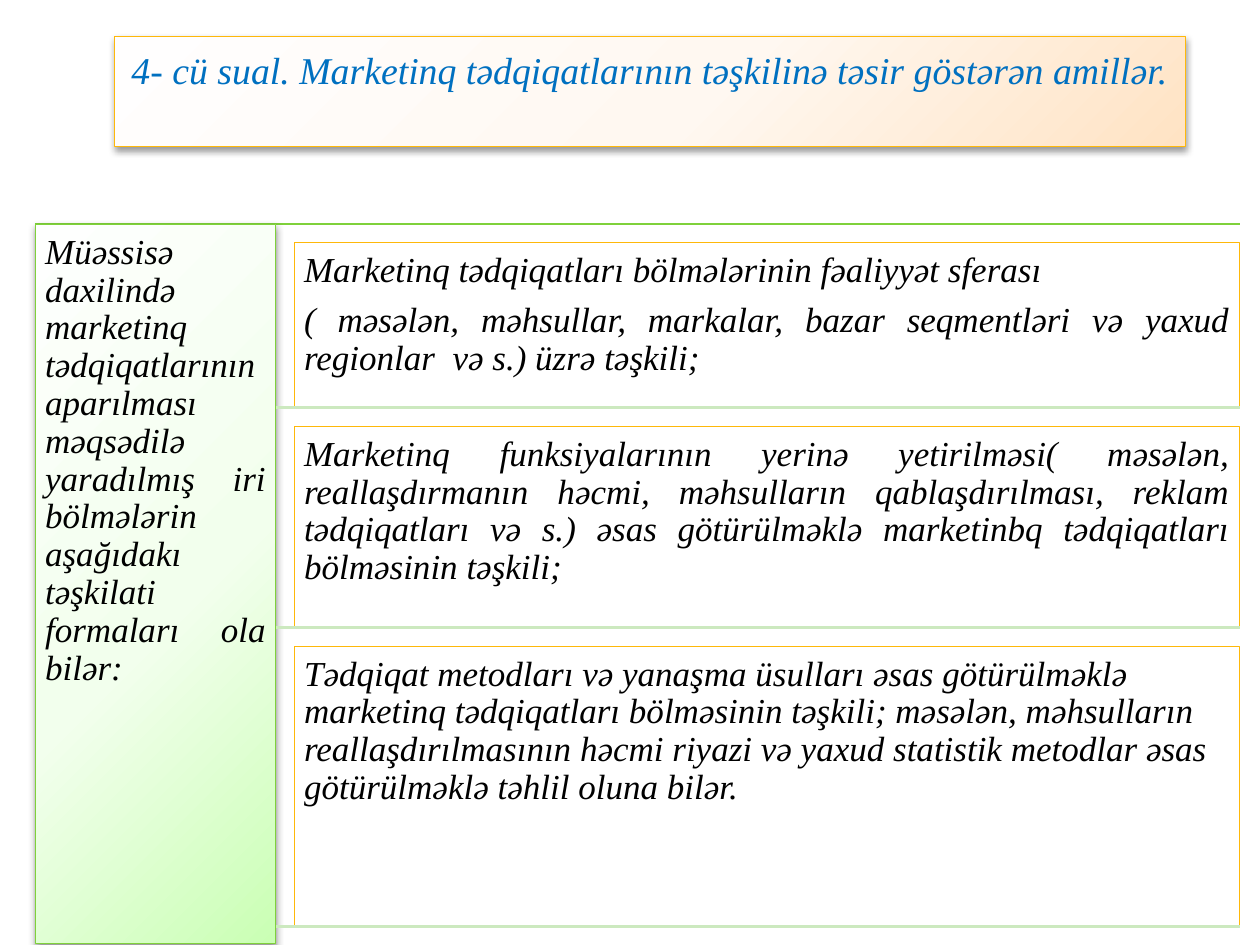
from lxml import etree
from pptx import Presentation
from pptx.dml.color import RGBColor
from pptx.enum.shapes import MSO_CONNECTOR, MSO_SHAPE
from pptx.enum.text import MSO_ANCHOR, MSO_AUTO_SIZE, PP_ALIGN
from pptx.oxml import parse_xml
from pptx.oxml.ns import qn
from pptx.util import Cm, Pt

RECTANGLE = MSO_SHAPE.RECTANGLE
STRAIGHT = MSO_CONNECTOR.STRAIGHT
TOP = MSO_ANCHOR.TOP
NO_AUTO_SIZE = MSO_AUTO_SIZE.NONE
LEFT, CENTER, JUSTIFY = PP_ALIGN.LEFT, PP_ALIGN.CENTER, PP_ALIGN.JUSTIFY

WHITE = RGBColor(0xFF, 0xFF, 0xFF)
BLACK = RGBColor(0x00, 0x00, 0x00)
BLUE = RGBColor(0x00, 0x70, 0xC0)
ORANGE = RGBColor(0xFE, 0xB8, 0x0A)
GREEN = RGBColor(0x7F, 0xD1, 0x3B)
PALE_GREEN = RGBColor(0xCC, 0xE9, 0xBF)
ORANGE_TINTS = (
    (0, RGBColor(0xFF, 0xFE, 0xFE)),
    (55, RGBColor(0xFF, 0xF8, 0xF1)),
    (100, RGBColor(0xFF, 0xE3, 0xC4)),
)
GREEN_TINTS = (
    (0, RGBColor(0xFE, 0xFF, 0xFE)),
    (55, RGBColor(0xF2, 0xFF, 0xED)),
    (100, RGBColor(0xCA, 0xFF, 0xB4)),
)

FONT = "Times New Roman"
NAMESPACE = 'xmlns:a="http://schemas.openxmlformats.org/drawingml/2006/main"'

TITLE = "4- cü sual. Marketinq tədqiqatlarının təşkilinə təsir göstərən amillər."
INTRODUCTION = (
    "Müəssisə daxilində marketinq tədqiqatlarının aparılması məqsədilə "
    "yaradılmış iri bölmələrin aşağıdakı təşkilati formaları ola bilər:"
)
FORMS = (
    (3.33, JUSTIFY, (
        "Marketinq tədqiqatları bölmələrinin fəaliyyət sferası ",
        "( məsələn, məhsullar, markalar, bazar seqmentləri və yaxud "
        "regionlar  və s.) üzrə təşkili;",
    )),
    (4.06, JUSTIFY, (
        "Marketinq funksiyalarının yerinə yetirilməsi( məsələn, "
        "reallaşdırmanın həcmi, məhsulların qablaşdırılması, reklam "
        "tədqiqatları və s.) əsas götürülməklə marketinbq tədqiqatları "
        "bölməsinin təşkili;",
    )),
    (5.66, LEFT, (
        "Tədqiqat metodları və yanaşma üsulları əsas götürülməklə "
        "marketinq tədqiqatları bölməsinin təşkili; məsələn, məhsulların "
        "reallaşdırılmasının həcmi riyazi və yaxud statistik metodlar əsas "
        "götürülməklə təhlil oluna bilər.",
    )),
)


def write_text(shape, paragraphs, size=20, color=BLACK, alignment=JUSTIFY,
               line_spacing=0.9, space_after=7, margin=0.2):
    frame = shape.text_frame
    frame.word_wrap = True
    frame.auto_size = NO_AUTO_SIZE
    frame.vertical_anchor = TOP
    frame.margin_left = frame.margin_right = Cm(margin)
    frame.margin_top = frame.margin_bottom = Cm(margin)
    for index, text in enumerate(paragraphs):
        paragraph = frame.add_paragraph() if index else frame.paragraphs[0]
        paragraph.alignment = alignment
        paragraph.line_spacing = line_spacing
        paragraph.space_before = Pt(0)
        paragraph.space_after = Pt(space_after)
        run = paragraph.add_run()
        run.text = text
        run.font.name = FONT
        run.font.size = Pt(size)
        run.font.italic = True
        run.font.color.rgb = color


def style_glowing_panel(shape, tints, line_color):
    stops = "".join(
        f'<a:gs pos="{position * 1000}"><a:srgbClr val="{color}"/></a:gs>'
        for position, color in tints
    )
    properties = shape._element.spPr
    properties.append(parse_xml(
        f'<a:gradFill {NAMESPACE} rotWithShape="1"><a:gsLst>{stops}</a:gsLst>'
        '<a:path path="circle"><a:fillToRect l="-40000" t="-90000" '
        'r="140000" b="190000"/></a:path></a:gradFill>'
    ))
    shape.line.color.rgb = line_color
    shape.line.width = Pt(0.75)
    properties.append(parse_xml(
        f'<a:effectLst {NAMESPACE}><a:outerShdw blurRad="{Pt(4.1)}" '
        f'dist="{Pt(2)}" dir="5400000" rotWithShape="0">'
        '<a:srgbClr val="000000"><a:alpha val="40000"/></a:srgbClr>'
        '</a:outerShdw></a:effectLst>'
    ))


def add_rule(slide, left, top, width, color):
    rule = slide.shapes.add_connector(
        STRAIGHT, Cm(left), Cm(top), Cm(left + width), Cm(top))
    rule.line.color.rgb = color
    rule.line.width = Pt(1.5)
    etree.SubElement(rule._element.spPr, qn("a:effectLst"))


def place_title(slide, left, top, width, height):
    title = slide.shapes.title
    title.left, title.top = Cm(left), Cm(top)
    title.width, title.height = Cm(width), Cm(height)
    style_glowing_panel(title, ORANGE_TINTS, ORANGE)
    write_text(title, [TITLE], size=21.6, color=BLUE, alignment=CENTER,
               line_spacing=1.0, space_after=0)


def place_introduction(slide, left, top, width, height):
    panel = slide.shapes.add_shape(
        RECTANGLE, Cm(left), Cm(top), Cm(width), Cm(height))
    style_glowing_panel(panel, GREEN_TINTS, GREEN)
    write_text(panel, [INTRODUCTION])


def place_forms(slide, left, top, width, gap=0.37):
    for height, alignment, paragraphs in FORMS:
        top += gap
        box = slide.shapes.add_shape(
            RECTANGLE, Cm(left + gap), Cm(top), Cm(width - gap), Cm(height))
        box.shadow.inherit = False
        box.fill.solid()
        box.fill.fore_color.rgb = WHITE
        box.line.color.rgb = ORANGE
        box.line.width = Pt(0.25)
        write_text(box, paragraphs, alignment=alignment)
        top += height
        add_rule(slide, left, top, width, PALE_GREEN)


def place_overview(slide, left, top, width, height, side_width=4.85):
    add_rule(slide, left, top, width, GREEN)
    place_introduction(slide, left, top, side_width, height)
    place_forms(slide, left + side_width, top, width - side_width)


def main():
    presentation = Presentation()
    presentation.slide_width, presentation.slide_height = Cm(25.4), Cm(19.05)
    title_only = presentation.slide_layouts[5]
    slide = presentation.slides.add_slide(title_only)
    place_title(slide, 2.31, 0.74, 21.59, 2.21)
    place_overview(slide, 0.71, 4.52, 24.28, 14.5)
    presentation.save("out.pptx")


if __name__ == "__main__":
    main()
